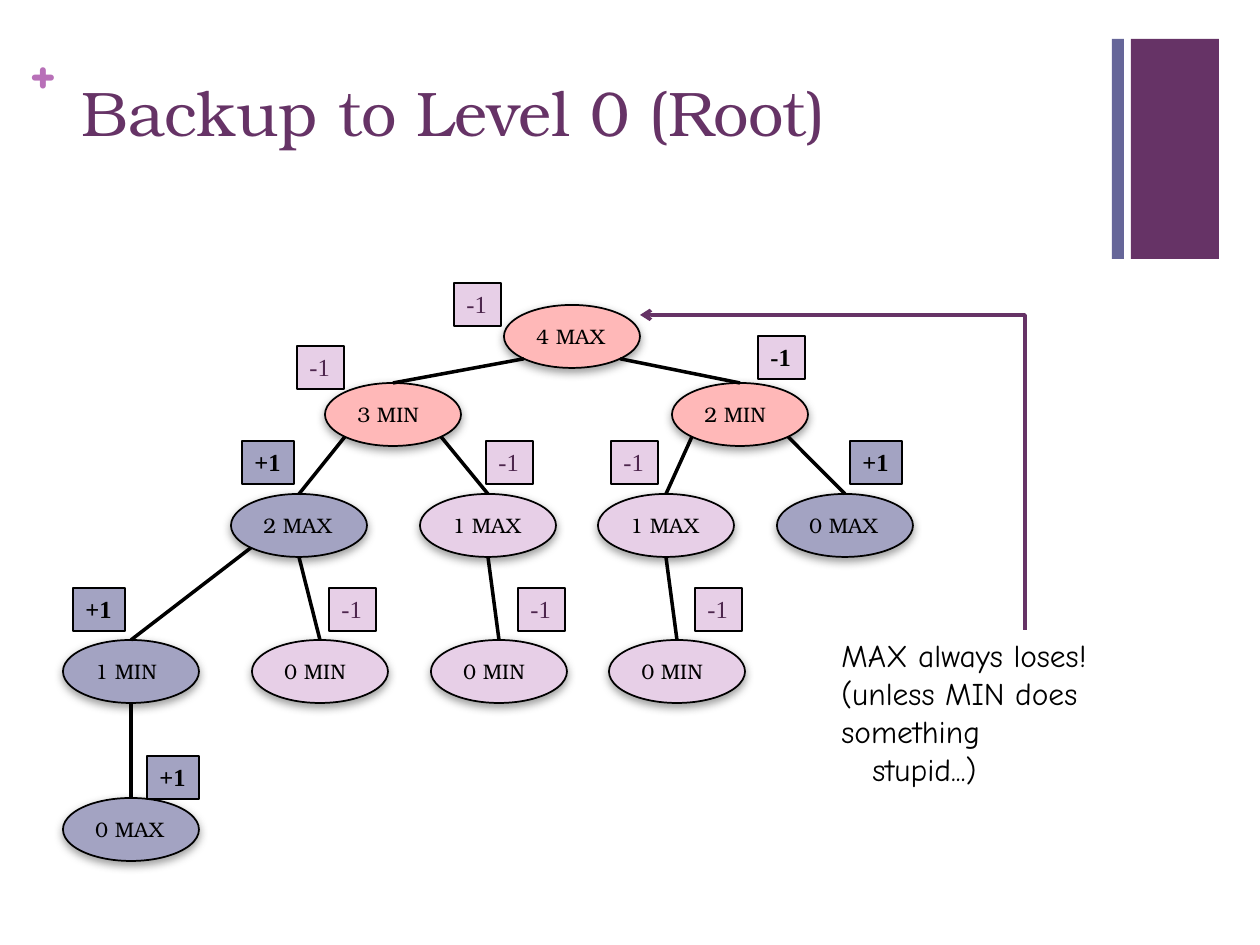
from collections import namedtuple
from math import sqrt

from lxml.etree import SubElement
from pptx import Presentation
from pptx.dml.color import RGBColor
from pptx.enum.shapes import MSO_CONNECTOR as CONN, MSO_SHAPE as SHAPE
from pptx.enum.text import MSO_ANCHOR as ANCHOR, MSO_AUTO_SIZE as FIT, PP_ALIGN as ALIGN
from pptx.oxml.ns import qn
from pptx.util import Emu, Pt

PX = 914400 / 126
COLORS = {
    "purple": "663366", "blue": "666699", "plus": "B870B8", "black": "000000",
    "shadow": "808080", "open": "FFB8B8", "loss": "E7CFE7", "win": "A3A3C2",
    "loss_text": "4D264D",
}
SERIF, HAND, ROMAN = "TeX Gyre Bonum", "Comic Neue", "Times New Roman"

# Tree: top of each level, node size, and one row per node
LEVEL_TOPS = (305, 383, 494, 640, 798)
NODE_W, NODE_H = 136, 63
BADGE_H = 43
Node = namedtuple("Node", "label kind level left parent side score badge_x badge_y")
NODES = [  # side: where the edge leaves the parent (-1 left, 0 bottom, 1 right)
    Node("4 MAX", "open", 0, 504, None, 0, "-1", 454, 283),
    Node("3 MIN", "open", 1, 325, 0, -1, "-1", 297, 346),
    Node("2 MIN", "open", 1, 672, 0, 1, "-1", 758, 336),
    Node("2 MAX", "win", 2, 231, 1, -1, "+1", 242, 441),
    Node("1 MAX", "loss", 2, 420, 1, 1, "-1", 486, 441),
    Node("1 MAX", "loss", 2, 598, 2, -1, "-1", 611, 441),
    Node("0 MAX", "win", 2, 777, 2, 1, "+1", 850, 441),
    Node("1 MIN", "win", 3, 63, 3, -1, "+1", 73, 588),
    Node("0 MIN", "loss", 3, 252, 3, 0, "-1", 329, 588),
    Node("0 MIN", "loss", 3, 431, 4, 0, "-1", 518, 588),
    Node("0 MIN", "loss", 3, 609, 5, 0, "-1", 695, 588),
    Node("0 MAX", "win", 4, 63, 7, 0, "+1", 147, 756),
]
DECISIVE = 2  # node whose losing score is set in bold black


def px(*values):
    return [Emu(round(v * PX)) for v in values]


def rgb(name):
    return RGBColor.from_string(COLORS[name])


def style(p, size, face, color, bold=False):
    p.alignment = ALIGN.LEFT
    p.font.size, p.font.name, p.font.bold = Pt(size), face, bold
    p.font.color.rgb = rgb(color)


def paint(sp, fill, line=None):
    sp.fill.solid()
    sp.fill.fore_color.rgb = rgb(fill)
    if line:
        sp.line.color.rgb, sp.line.width = rgb("black"), Pt(line)
    else:
        sp.line.fill.background()


def add_bar(slide, box, fill):
    sp = slide.shapes.add_shape(SHAPE.RECTANGLE, *px(*box))
    sp.shadow.inherit = False
    paint(sp, fill)


def add_text(slide, box, lines, font, wrap=False):
    sp = slide.shapes.add_textbox(*px(*box))
    tf = sp.text_frame
    tf.word_wrap, tf.auto_size = wrap, FIT.SHAPE_TO_FIT_TEXT
    tf.text = "\n".join(lines)
    for p in tf.paragraphs:
        style(p, *font)
    return sp


def add_node(slide, node):
    box = px(node.left, LEVEL_TOPS[node.level], NODE_W, NODE_H)
    sp = slide.shapes.add_shape(SHAPE.OVAL, *box)
    paint(sp, node.kind, 1)
    sp.shadow.inherit = False
    # Soft shadow straight below
    effects = sp._element.spPr.find(qn("a:effectLst"))
    shadow = SubElement(effects, qn("a:outerShdw"), blurRad=str(Pt(5)),
                        dist=str(Pt(2)), dir="5400000", rotWithShape="0")
    color = SubElement(shadow, qn("a:srgbClr"), val=COLORS["shadow"])
    SubElement(color, qn("a:alpha"), val="75000")
    tf = sp.text_frame
    tf.text, tf.vertical_anchor = node.label, ANCHOR.MIDDLE
    style(tf.paragraphs[0], 12, SERIF, "black")
    return sp


def add_line(slide, kind, ends, color):
    line = slide.shapes.add_connector(kind, *ends)
    line.line.color.rgb, line.line.width = rgb(color), Pt(2)
    SubElement(line._element.spPr, qn("a:effectLst"))
    return line


def add_edge(slide, parent, child, side):
    # Leave the parent at its bottom or at a 45 degree point of the ellipse
    reach = 1 / sqrt(2) if side else 1
    x = parent.left + parent.width * (1 + side * reach) / 2
    y = parent.top + parent.height * (1 + reach) / 2
    ends = (round(x), round(y), child.left + child.width // 2, child.top)
    add_line(slide, CONN.STRAIGHT, ends, "black").end_connect(child, 0)


def add_badge(slide, node, strong):
    width = 52 if node.score == "+1" else 47
    color = "black" if strong else "loss_text"
    sp = add_text(slide, (node.badge_x, node.badge_y, width, BADGE_H),
                  [node.score], (14, ROMAN, color, strong))
    paint(sp, "win" if node.score == "+1" else "loss", 0.75)


def add_note_arrow(slide):
    # One-bend connector, turned a quarter: up from the note, then left to the root
    line = add_line(slide, CONN.ELBOW, px(675, 665, 990, 280), "purple")
    spPr = line._element.spPr
    spPr.find(qn("a:xfrm")).set("rot", "16200000")
    spPr.find(qn("a:prstGeom")).set("prst", "bentConnector2")
    SubElement(spPr.find(qn("a:ln")), qn("a:tailEnd"), type="arrow")


def add_title(slide, text):
    sp = slide.shapes.title
    sp.left, sp.top, sp.width, sp.height = px(69, 67, 1041, 153)
    tf = sp.text_frame
    tf.text, tf.vertical_anchor, tf.auto_size = text, ANCHOR.TOP, FIT.NONE
    style(tf.paragraphs[0], 36, SERIF, "purple")


def main():
    prs = Presentation()
    prs.slide_width, prs.slide_height = px(1260, 945)
    slide = prs.slides.add_slide(prs.slide_layouts[5])

    # Decoration and title
    add_bar(slide, (1131, 39, 88, 220), "purple")
    plus = add_text(slide, (30, 31, 35, 77), ["+"], (36, HAND, "plus", True), True)
    tf = plus.text_frame
    tf.margin_left = tf.margin_top = tf.margin_right = tf.margin_bottom = 0
    add_bar(slide, (1112, 39, 12, 220), "blue")
    add_title(slide, "Backup to Level 0 (Root)")

    # Game tree
    ovals = [add_node(slide, node) for node in NODES]
    for node, oval in zip(NODES, ovals):
        if node.parent is not None:
            add_edge(slide, ovals[node.parent], oval, node.side)
    for i, node in enumerate(NODES):
        add_badge(slide, node, node.score == "+1" or i == DECISIVE)

    # Note on the result
    lines = ["MAX always loses!", "(unless MIN does something", "stupid...)"]
    note = add_text(slide, (829, 630, 392, 127), lines, (18, HAND, "black"), True)
    last = note.text_frame.paragraphs[-1]
    last._p.get_or_add_pPr().set("marL", str(px(31)[0]))
    add_note_arrow(slide)

    prs.save("out.pptx")


if __name__ == "__main__":
    main()
